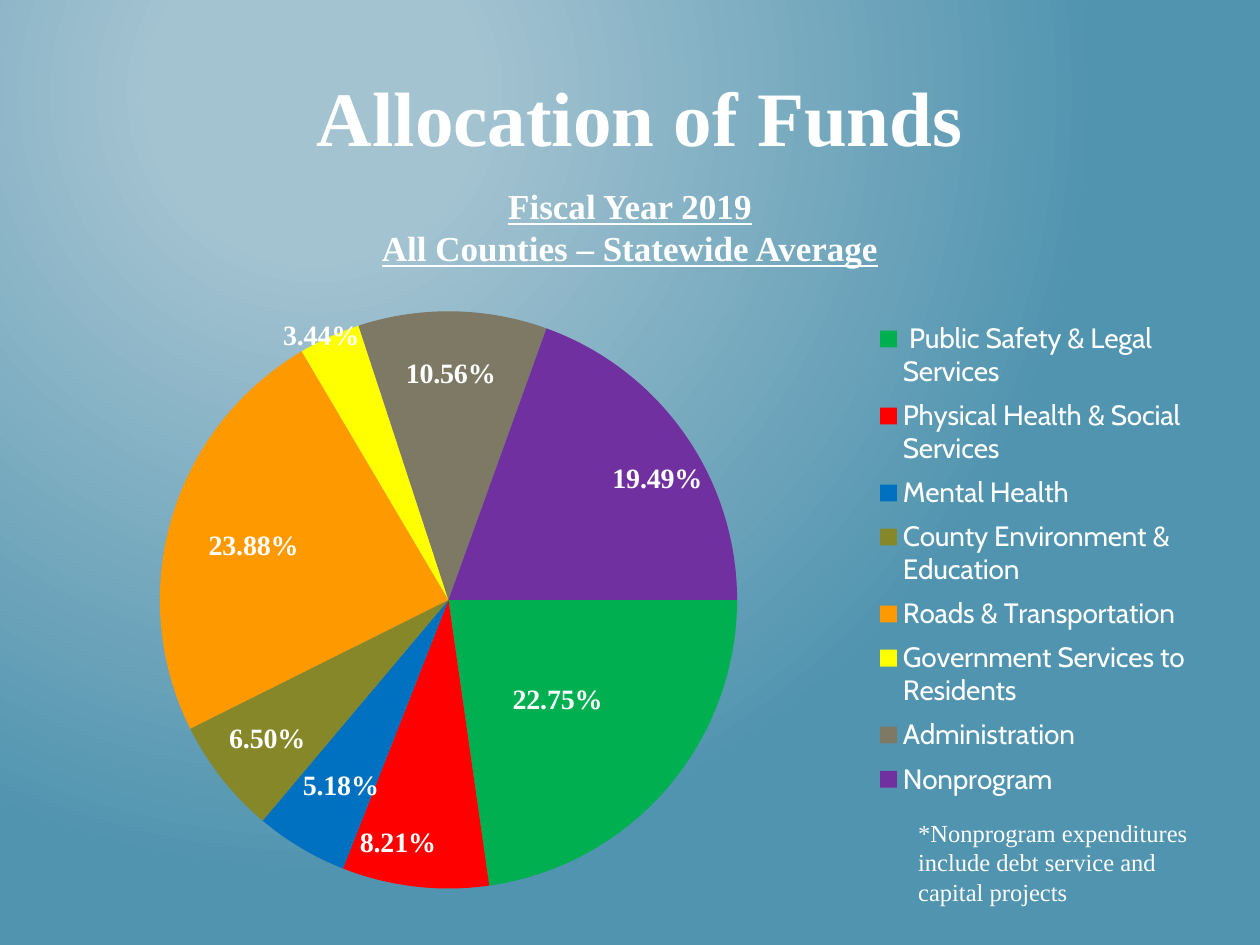
from lxml import etree
from pptx import Presentation
from pptx.chart.data import CategoryChartData
from pptx.dml.color import RGBColor
from pptx.enum.chart import XL_CHART_TYPE as ChartType
from pptx.enum.chart import XL_LABEL_POSITION as LabelPos
from pptx.enum.chart import XL_LEGEND_POSITION as LegendPos
from pptx.enum.text import MSO_ANCHOR as Anchor
from pptx.enum.text import MSO_AUTO_SIZE as AutoSize
from pptx.enum.text import PP_ALIGN as Align
from pptx.oxml import parse_xml
from pptx.oxml.ns import qn
from pptx.util import Cm, Pt

SERIF, SANS, WHITE = "Times New Roman", "Cabin", "FFFFFF"

FUNDS = [
    (" Public Safety & Legal Services", 22.75, "00B050", (0, 0.01)),
    ("Physical Health & Social Services", 8.21, "FF0000", (-0.03, 0.16)),
    ("Mental Health", 5.18, "0070C0", (-0.03, 0.1)),
    ("County Environment & Education", 6.5, "868728", (-0.06, 0.08)),
    ("Roads & Transportation", 23.88, "FF9900", (-0.05, -0.02)),
    ("Government Services to Residents", 3.44, "FFFF00", (-0.06, -0.21)),
    ("Administration", 10.56, "7D7965", (0, -0.13)),
    ("Nonprogram", 19.49, "7030A0", (0.08, -0.06)),
]


def rgb(value):
    """Return the colour for a hex string."""
    return RGBColor.from_string(value)


def style(font, size, name=SERIF, bold=False, underline=None):
    """Format a font in white."""
    font.size, font.name, font.bold = Pt(size), name, bold
    font.color.rgb = rgb(WHITE)
    if underline is not None:
        font.underline = underline


def sub(parent, tag, val):
    """Append a chart element with a val attribute."""
    etree.SubElement(parent, qn(tag)).set("val", str(val))


def manual_layout(**parts):
    """Build a manual chart layout from its named parts."""
    layout = parse_xml(
        '<c:layout xmlns:c="http://schemas.openxmlformats.org/drawingml/2006/chart">'
        "<c:manualLayout/></c:layout>"
    )
    for name, val in parts.items():
        sub(layout[0], f"c:{name}", val)
    return layout


def set_background(s):
    """Fill the slide with a circular gradient."""
    fill = s.background.fill
    fill.gradient()
    for stop, (pos, color) in zip(fill.gradient_stops, [(0.2, "A3C3D1"), (1, "5194AF")]):
        stop.position = pos
        stop.color.rgb = rgb(color)
    grad = s.element.find(".//" + qn("a:gradFill"))
    grad.remove(grad.find(qn("a:lin")))
    circle = etree.SubElement(grad, qn("a:path"), {"path": "circle"})
    rect = {"l": "50000", "t": "20000", "r": "100000", "b": "100000"}
    etree.SubElement(circle, qn("a:fillToRect"), rect)


def place(sp, box):
    """Move a shape to its box."""
    sp.left, sp.top, sp.width, sp.height = map(Cm, box)


def add_title(s, box):
    """Place the title placeholder."""
    sp = s.shapes.title
    place(sp, box)
    tf = sp.text_frame
    tf.text = "Allocation of Funds"
    tf.word_wrap, tf.auto_size = False, AutoSize.NONE
    tf.vertical_anchor = Anchor.TOP
    p = tf.paragraphs[0]
    p.alignment = Align.CENTER
    style(p.runs[0].font, 44, bold=True)


def add_text(s, box, lines, size, align, bold=False, underline=None):
    """Add a wrapped text box with one paragraph a line."""
    tf = s.shapes.add_textbox(*map(Cm, box)).text_frame
    tf.text = "\n".join(lines)
    tf.word_wrap = True
    for p in tf.paragraphs:
        p.alignment = align
        style(p.runs[0].font, size, bold=bold, underline=underline)


def format_slice(ser, i, color, shift):
    """Colour one slice and move its percentage label."""
    point = ser.points[i]
    point.format.fill.solid()
    point.format.fill.fore_color.rgb = rgb(color)
    label = point.data_label
    label.position = LabelPos.CENTER
    style(label.font, 16, bold=True)
    node = ser.data_labels._element.findall(qn("c:dLbl"))[i]
    node.find(qn("c:showVal")).set("val", "0")
    node.find(qn("c:showPercent")).set("val", "1")
    layout = manual_layout(x=shift[0], y=shift[1])
    node.find(qn("c:idx")).addnext(layout)
    fmt = etree.Element(qn("c:numFmt"), formatCode="0.00%", sourceLinked="0")
    layout.addnext(fmt)


def add_legend(chart):
    """Add the legend spread along the right side of the chart."""
    chart.has_legend = True
    legend = chart.legend
    legend.position = LegendPos.RIGHT
    legend.include_in_layout = False
    style(legend.font, 16, SANS)
    node = chart.element.find(".//" + qn("c:legend"))
    for old in node.findall(qn("c:layout")):
        node.remove(old)
    node.find(qn("c:legendPos")).addnext(manual_layout(
        xMode="edge", yMode="edge", x=0.71, y=0.04, w=0.29, h=0.79,
    ))


def add_pie(s, box):
    """Add the pie of fund shares with its legend."""
    data = CategoryChartData()
    data.categories = [name for name, *_ in FUNDS]
    data.add_series("Series 1", [val for _, val, *_ in FUNDS])
    chart = s.shapes.add_chart(ChartType.PIE, *map(Cm, box), data).chart
    style(chart.font, 18, SANS)
    chart.has_title = False
    add_legend(chart)

    plot = chart.plots[0]
    plot.vary_by_categories = True
    ser = plot.series[0]
    labels = ser.data_labels
    labels.show_value, labels.show_percentage = False, True
    labels.number_format, labels.number_format_is_linked = "0.00%", False
    style(labels.font, 16, bold=True)
    for i, (_, _, color, shift) in enumerate(FUNDS):
        format_slice(ser, i, color, shift)

    area = chart.element.find(".//" + qn("c:plotArea"))
    pie = area.find(qn("c:pieChart"))
    for parent, tag in ((area, "c:layout"), (pie, "c:firstSliceAng")):
        for old in parent.findall(qn(tag)):
            parent.remove(old)
    area.insert(0, manual_layout(
        layoutTarget="inner", xMode="edge", yMode="edge",
        x=0.02, y=0.04, w=0.64, h=0.92,
    ))
    sub(pie, "c:firstSliceAng", 90)


def main():
    """Build and save the slide."""
    prs = Presentation()
    prs.slide_width, prs.slide_height = Cm(25.4), Cm(19.05)
    s = prs.slides.add_slide(prs.slide_layouts[5])
    set_background(s)
    add_pie(s, (1.27, 5.77, 22.86, 12.65))
    add_title(s, (6.07, 1.27, 13.67, 2.13))
    heading = ["Fiscal Year 2019", "All Counties – Statewide Average"]
    add_text(s, (6.35, 3.6, 12.7, 1.96), heading, 20, Align.CENTER, True, True)
    note = ["*Nonprogram expenditures include debt service and capital projects"]
    add_text(s, (18.26, 16.36, 6.27, 2.06), note, 14, Align.LEFT)
    prs.save("out.pptx")


if __name__ == "__main__":
    main()
